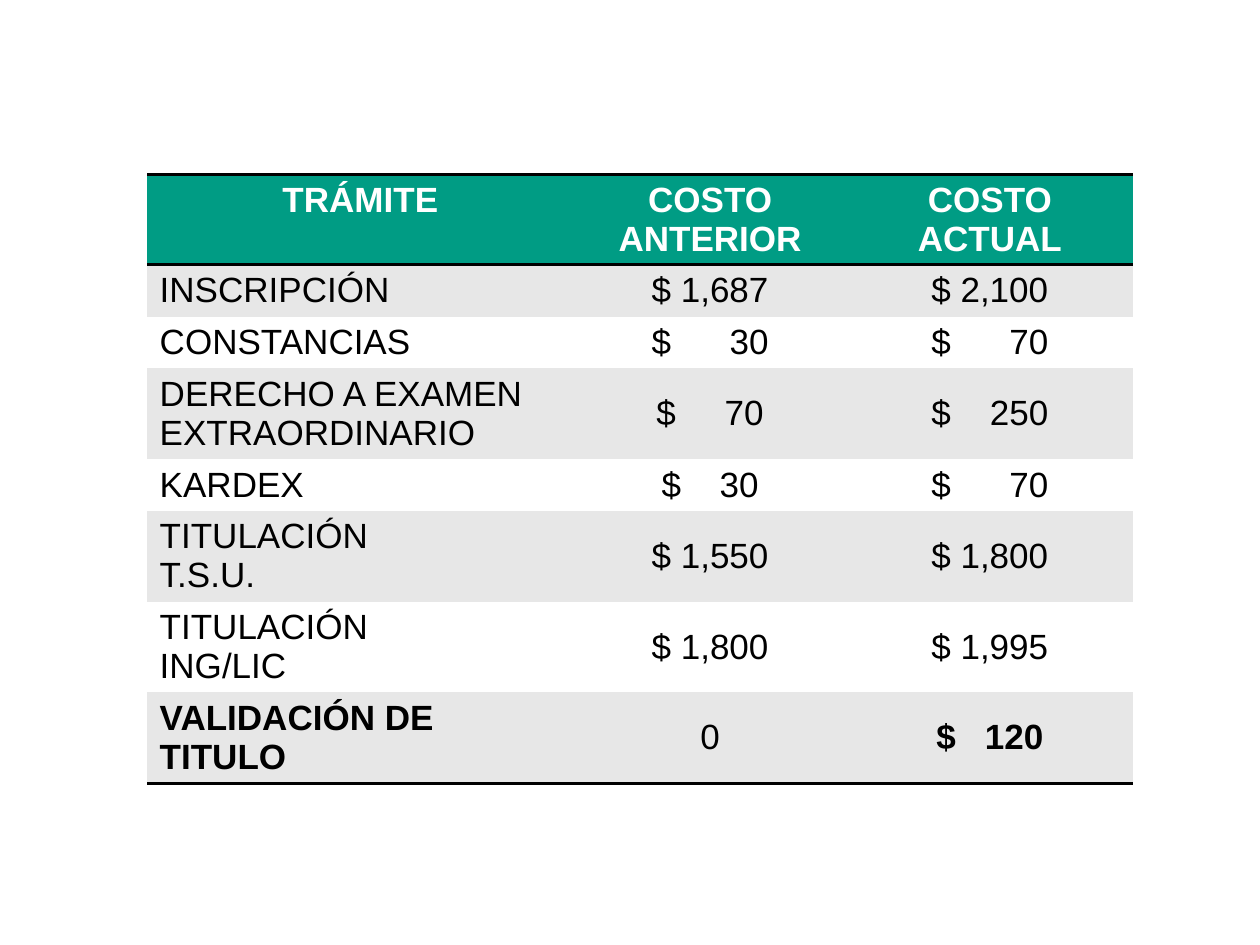
from lxml import etree
from pptx import Presentation
from pptx.dml.color import RGBColor
from pptx.enum.text import MSO_ANCHOR, PP_ALIGN
from pptx.oxml.ns import qn
from pptx.util import Cm, Pt

LEFT, CENTER = PP_ALIGN.LEFT, PP_ALIGN.CENTER
TOP, MIDDLE = MSO_ANCHOR.TOP, MSO_ANCHOR.MIDDLE

GREEN, GREY, WHITE, BLACK = "009C84", "E7E7E7", "FFFFFF", "000000"
COLUMN_WIDTHS = (8.59, 5.51, 5.77)
ONE_LINE, TWO_LINES = 1.04, 1.83
SIDE_MARGIN = 0.25

HEADINGS = ("TRÁMITE", "COSTO ANTERIOR", "COSTO ACTUAL")
# Procedure, previous cost, current cost, row height.
# A cost given as (number, span) has "$" and the number at the ends of the span in cm.
FEES = (
    ("INSCRIPCIÓN", "$ 1,687", "$ 2,100", ONE_LINE),
    ("CONSTANCIAS", ("30", 2.36), ("70", 2.36), ONE_LINE),
    ("DERECHO A EXAMEN EXTRAORDINARIO", ("70", 2.16), ("250", 2.36), TWO_LINES),
    ("KARDEX", ("30", 1.96), ("70", 2.36), ONE_LINE),
    ("TITULACIÓN\nT.S.U.", "$ 1,550", "$ 1,800", TWO_LINES),
    ("TITULACIÓN\nING/LIC", "$ 1,800", "$ 1,995", TWO_LINES),
    ("VALIDACIÓN DE TITULO", "0", ("120", 2.16), TWO_LINES),
)
BOLD_CELLS = {(7, 0), (7, 2)}


def rgb(color):
    return RGBColor.from_string(color)


def write(cell, text, *, color=BLACK, bold=False, align=LEFT, anchor=TOP, tab=None):
    """Write one paragraph per line, with an optional right tab in cm."""
    cell.vertical_anchor = anchor
    frame = cell.text_frame
    for index, line in enumerate(text.split("\n")):
        paragraph = frame.add_paragraph() if index else frame.paragraphs[0]
        paragraph.alignment = align
        if tab:
            tabs = etree.SubElement(paragraph._p.get_or_add_pPr(), qn("a:tabLst"))
            etree.SubElement(tabs, qn("a:tab"), pos=str(Cm(tab)), algn="r")
        run = paragraph.add_run()
        run.text = line
        run.font.name = "Arial"
        run.font.size = Pt(20)
        run.font.bold = bold
        run.font.color.rgb = rgb(color)


def paint(cell, fill, ruled_edges):
    """Fill a cell and rule only the named edges in black."""
    cell.fill.solid()
    cell.fill.fore_color.rgb = rgb(fill)
    properties = cell._tc.get_or_add_tcPr()
    for position, edge in enumerate("LRTB"):
        line = etree.Element(qn(f"a:ln{edge}"), w=str(Pt(2)))
        if edge in ruled_edges:
            solid = etree.SubElement(line, qn("a:solidFill"))
            etree.SubElement(solid, qn("a:srgbClr"), val=BLACK)
        else:
            etree.SubElement(line, qn("a:noFill"))
        properties.insert(position, line)


def write_cost(cell, cost, column_width, **style):
    if isinstance(cost, str):
        write(cell, cost, align=CENTER, **style)
        return
    number, span = cost
    cell.margin_left = Cm((column_width - span) / 2)
    write(cell, f"$\t{number}", tab=span, **style)


def add_fee_table(slide, left, top):
    heights = [TWO_LINES] + [fee[-1] for fee in FEES]
    frame = slide.shapes.add_table(
        len(heights), len(COLUMN_WIDTHS), Cm(left), Cm(top),
        Cm(sum(COLUMN_WIDTHS)), Cm(sum(heights)))
    table = frame.table
    table.horz_banding = False
    for column, width in zip(table.columns, COLUMN_WIDTHS):
        column.width = Cm(width)
    for row, height in zip(table.rows, heights):
        row.height = Cm(height)

    # Header row
    for column, heading in enumerate(HEADINGS):
        cell = table.cell(0, column)
        cell.margin_left = cell.margin_right = Cm(SIDE_MARGIN)
        write(cell, heading, color=WHITE, bold=True, align=CENTER)
        paint(cell, GREEN, "TB")

    # Fee rows, banded grey and white
    for row, (procedure, *costs, height) in enumerate(FEES, start=1):
        edges = "T" if row == 1 else "B" if row == len(FEES) else ""
        anchor = MIDDLE if height == TWO_LINES else TOP
        for column, content in enumerate((procedure, *costs)):
            cell = table.cell(row, column)
            cell.margin_left = cell.margin_right = Cm(SIDE_MARGIN)
            bold = (row, column) in BOLD_CELLS
            if column == 0:
                write(cell, content, bold=bold)
            else:
                write_cost(cell, content, COLUMN_WIDTHS[column], bold=bold, anchor=anchor)
            paint(cell, GREY if row % 2 else WHITE, edges)


def main():
    presentation = Presentation()
    presentation.slide_width, presentation.slide_height = Cm(25.4), Cm(19.05)
    slide = presentation.slides.add_slide(presentation.slide_layouts[6])
    add_fee_table(slide, 2.97, 3.51)
    presentation.save("out.pptx")


if __name__ == "__main__":
    main()
